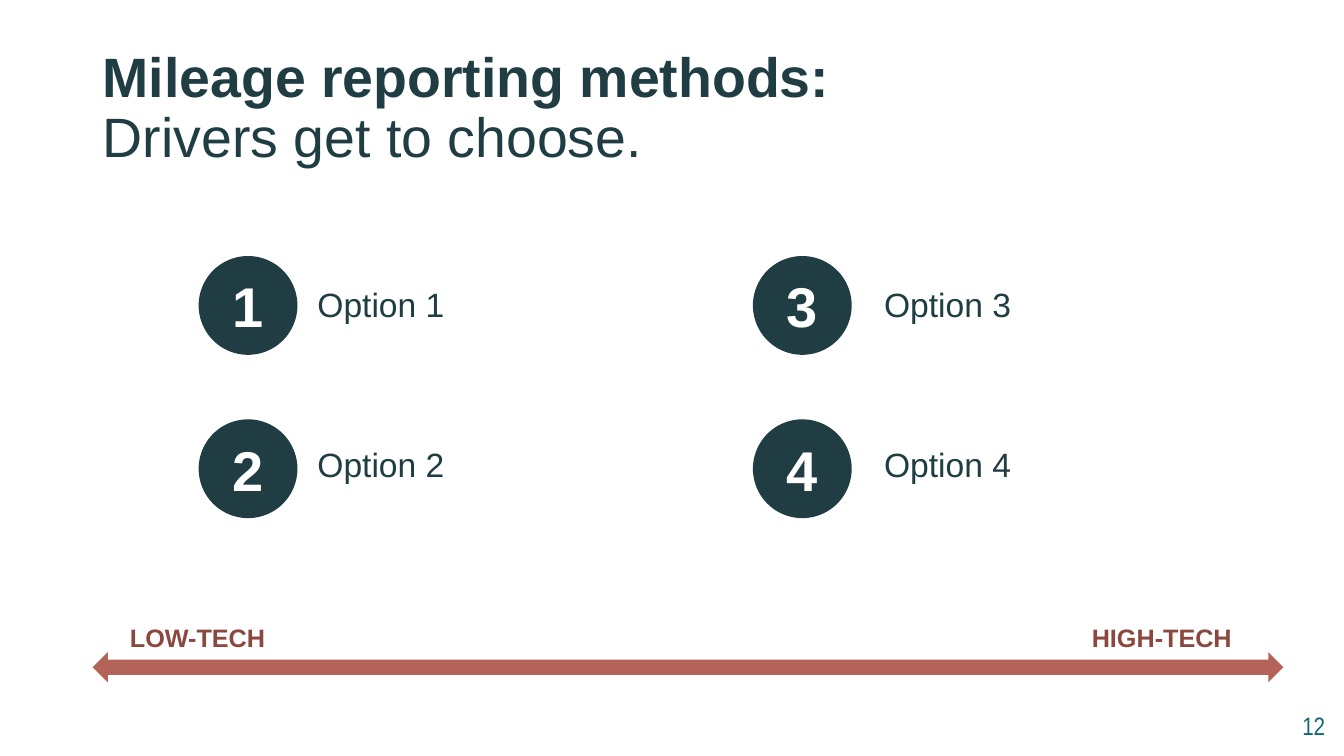
from dataclasses import dataclass

from pptx import Presentation
from pptx import util as u
from pptx.dml.color import RGBColor
from pptx.enum import shapes, text


@dataclass(frozen=True)
class Theme:
    """Colours, fonts and type sizes of the slide."""
    dark: str = "1F3D42"
    teal: str = "0F6873"
    clay: str = "B36358"
    rust: str = "8A483F"
    white: str = "FFFFFF"
    font: str = "Arial"
    narrow: str = "Arial Narrow"
    head: float = 39.6
    badge: float = 40
    body: float = 24
    small: float = 18


class Board:
    """Draws elements on one slide, with boxes in percent of its size."""

    def __init__(self, deck, theme):
        """Add a title-only slide to the deck."""
        self.deck = deck
        self.theme = theme
        self.slide = deck.slides.add_slide(deck.slide_layouts[5])

    def area(self, left, top, width, height):
        """Turn percentages into slide lengths."""
        wide, high = self.deck.slide_width, self.deck.slide_height
        return [int(part * full / 100) for part, full in
                zip((left, top, width, height), (wide, high, wide, high))]

    def letter(self, shape, words, size, color, bold=False, font=None,
               align=text.PP_ALIGN.LEFT, anchor=text.MSO_ANCHOR.TOP):
        """Set the text of a shape and format its runs."""
        frame = shape.text_frame
        frame.text = words
        frame.word_wrap = True
        frame.auto_size = text.MSO_AUTO_SIZE.NONE
        frame.vertical_anchor = anchor
        for line in frame.paragraphs:
            line.alignment = align
            for run in line.runs:
                run.font.name = font or self.theme.font
                run.font.size = u.Pt(size)
                run.font.bold = bold
                run.font.color.rgb = RGBColor.from_string(color)

    def title(self, words, box):
        """Fill the title, with its first line in bold."""
        shape = self.slide.shapes.title
        shape.left, shape.top, shape.width, shape.height = self.area(*box)
        self.letter(shape, words, self.theme.head, self.theme.dark,
                    anchor=text.MSO_ANCHOR.BOTTOM)
        for line in shape.text_frame.paragraphs:
            line.line_spacing = 0.9
        shape.text_frame.paragraphs[0].runs[0].font.bold = True

    def label(self, words, box, size, color, **style):
        """Add a text box."""
        shape = self.slide.shapes.add_textbox(*self.area(*box))
        self.letter(shape, words, size, color, **style)

    def solid(self, kind, box, color):
        """Add a plain filled shape."""
        shape = self.slide.shapes.add_shape(kind, *self.area(*box))
        shape.shadow.inherit = False
        shape.fill.solid()
        shape.fill.fore_color.rgb = RGBColor.from_string(color)
        shape.line.fill.background()
        return shape

    def badge(self, words, box):
        """Add a numbered circle."""
        shape = self.solid(shapes.MSO_SHAPE.OVAL, box, self.theme.dark)
        self.letter(shape, words, self.theme.badge, self.theme.white,
                    bold=True, align=text.PP_ALIGN.CENTER,
                    anchor=text.MSO_ANCHOR.MIDDLE)


def main():
    """Build and save the slide."""
    deck = Presentation()
    deck.slide_width, deck.slide_height = u.Inches(13.33), u.Inches(7.5)
    theme = Theme()
    board = Board(deck, theme)
    board.title("Mileage reporting methods:\nDrivers get to choose.",
                (6.9, 11.6, 77.27, 11.47))
    board.label("12", (95.5, 93.33, 4.5, 5.33), theme.small, theme.teal,
                font=theme.narrow, align=text.PP_ALIGN.CENTER)
    board.solid(shapes.MSO_SHAPE.LEFT_RIGHT_ARROW, (6.9, 86.27, 88.6, 4),
                theme.clay)
    for words, left in (("LOW-TECH", 8.93), ("HIGH-TECH", 80.5)):
        board.label(words, (left, 73.6, 12.5, 13.33), theme.small, theme.rust,
                    bold=True, anchor=text.MSO_ANCHOR.BOTTOM)
    for index in range(4):
        col, row = divmod(index, 2)
        board.badge(str(index + 1),
                    (14.78 + 41.24 * col, 33.87 + 21.6 * row, 7.35, 13.07))
        board.label(f"Option {index + 1}",
                    (22.88 + 42.16 * col, 36.93 + 21.07 * row, 29.18, 12.13),
                    theme.body, theme.dark)
    deck.save("out.pptx")


if __name__ == "__main__":
    main()
